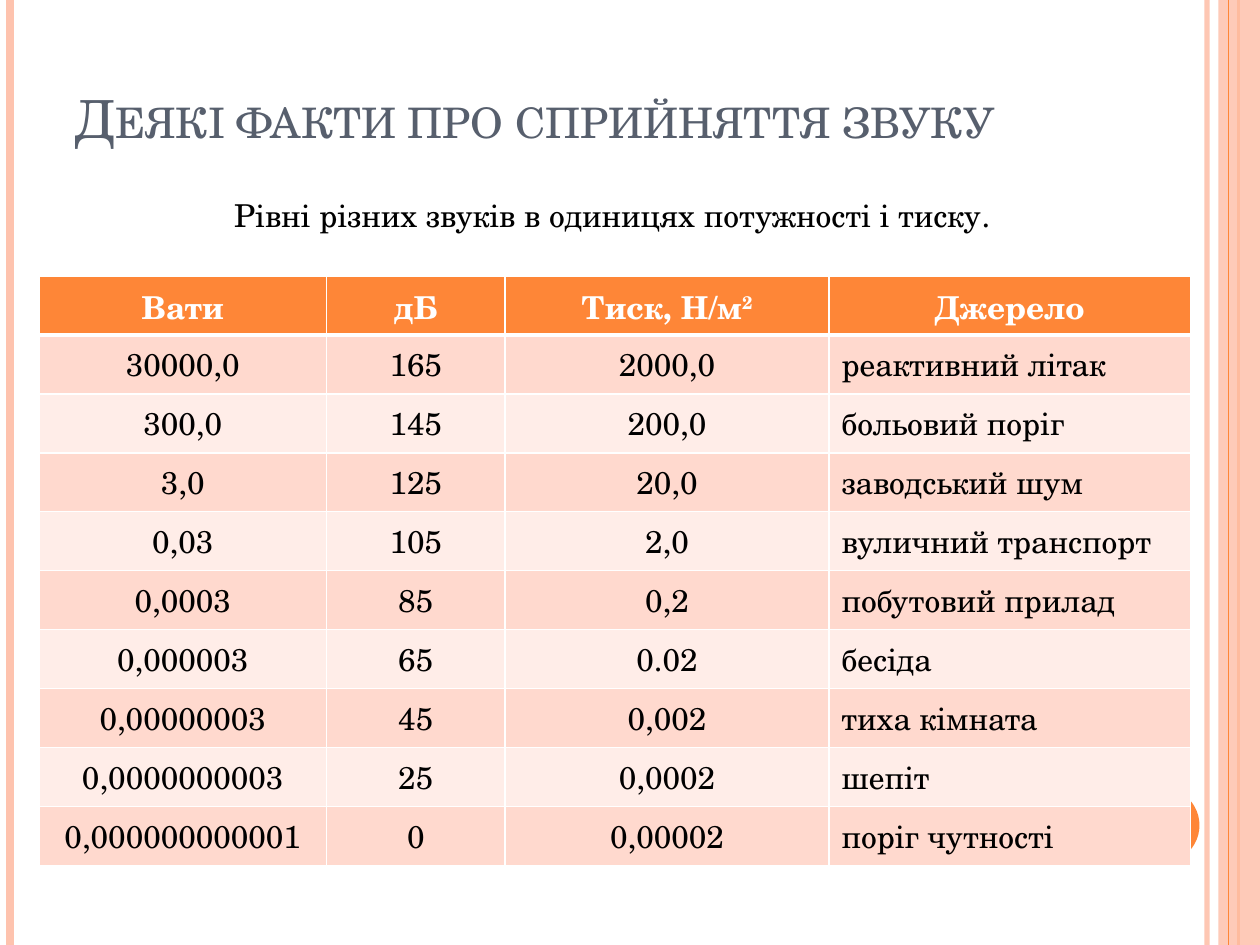
"""Build a slide with a table of sound levels in power and pressure units."""
from lxml import etree
from pptx import Presentation
from pptx.dml.color import RGBColor
from pptx.enum.shapes import MSO_CONNECTOR, MSO_SHAPE
from pptx.enum.text import MSO_ANCHOR, PP_ALIGN
from pptx.oxml.ns import qn
from pptx.util import Inches, Pt

STRAIGHT = MSO_CONNECTOR.STRAIGHT
RECTANGLE, OVAL = MSO_SHAPE.RECTANGLE, MSO_SHAPE.OVAL
LEFT, CENTER = PP_ALIGN.LEFT, PP_ALIGN.CENTER
BOTTOM = MSO_ANCHOR.BOTTOM
FONT = "TeX Gyre Schola"
COLORS = {
    "orange": "FE8637", "peach": "FEC3AE", "slate": "575F6D", "white": "FFFFFF",
    "black": "000000", "odd": "FFD9CE", "even": "FFEDE8",
}


def add_run(paragraph, text, size, color, bold=False, **marks):
    run = paragraph.add_run()
    run.text = text
    run.font.name, run.font.size, run.font.bold = FONT, Pt(size), bold
    run.font.color.rgb = RGBColor.from_string(COLORS[color])
    for mark, value in marks.items():
        run.font._element.set(mark, value)


def set_alpha(parent, percent):
    for color in parent.iter(qn("a:srgbClr")):
        etree.SubElement(color, qn("a:alpha")).set("val", str(percent * 1000))


prs = Presentation()
prs.slide_width, prs.slide_height = Inches(10), Inches(7.5)
W, H = prs.slide_width, prs.slide_height
slide = prs.slides.add_slide(prs.slide_layouts[6])
shapes = slide.shapes

band = (RECTANGLE, 9.67, 0, 0.33, 7.5, "peach", 87)
disc = (OVAL, 8.92, 6.25, 0.6, 0.6, "orange", 100)
ornaments = [
    (9.58, "peach", 3, 93),
    (0.08, "peach", 4.5, 100),
    (9.83, "orange", 1.5, 100),
    band,
    (9.75, "orange", 0.75, 100),
    disc,
]
for part in ornaments:
    if part in (band, disc):
        preset, left, top, width, height, color, alpha = part
        ornament = shapes.add_shape(preset, *map(Inches, (left, top, width, height)))
        ornament.shadow.inherit = False
        ornament.fill.solid()
        ornament.fill.fore_color.rgb = RGBColor.from_string(COLORS[color])
        ornament.line.fill.background()
    else:
        x, color, weight, alpha = part
        ornament = shapes.add_connector(STRAIGHT, Inches(x), 0, Inches(x), H)
        ornament.line.color.rgb = RGBColor.from_string(COLORS[color])
        ornament.line.width = Pt(weight)
        etree.SubElement(ornament._element.spPr, qn("a:effectLst"))
    if alpha < 100:
        set_alpha(ornament._element.spPr, alpha)

title = shapes.add_textbox(int(W * 0.05), int(H * 0.04), int(W * 0.895), Inches(0.93)).text_frame
title.word_wrap = True
title.vertical_anchor = BOTTOM
add_run(title.paragraphs[0], "Деякі факти про сприйняття звуку", 30, "slate", cap="small")

levels = [
    ("Вати", "дБ", "Тиск, Н/м", "Джерело"),
    ("30000,0", "165", "2000,0", "реактивний літак"),
    ("300,0", "145", "200,0", "больовий поріг"),
    ("3,0", "125", "20,0", "заводський шум"),
    ("0,03", "105", "2,0", "вуличний транспорт"),
    ("0,0003", "85", "0,2", "побутовий прилад"),
    ("0,000003", "65", "0.02", "бесіда"),
    ("0,00000003", "45", "0,002", "тиха кімната"),
    ("0,0000000003", "25", "0,0002", "шепіт"),
    ("0,000000000001", "0", "0,00002", "поріг чутності"),
]
column_widths = [2.28, 1.42, 2.57, 2.87]
table_height = Inches(4.68)
row_height = table_height // len(levels)
table = shapes.add_table(
    len(levels), len(column_widths), Inches(0.31), Inches(2.19),
    Inches(sum(column_widths)), table_height,
).table
for column, width in zip(table.columns, column_widths):
    column.width = Inches(width)

for r, level in enumerate(levels):
    header = r == 0
    table.rows[r].height = row_height
    fill = "orange" if header else "odd" if r % 2 else "even"
    borders = {"lnL": 1, "lnR": 1, "lnT": 3 if r == 1 else 1, "lnB": 3 if header else 1}
    for c, text in enumerate(level):
        cell = table.cell(r, c)
        properties = cell._tc.get_or_add_tcPr()
        for side, weight in borders.items():
            border = etree.SubElement(properties, qn(f"a:{side}"), w=str(Pt(weight)))
            paint = etree.SubElement(border, qn("a:solidFill"))
            etree.SubElement(paint, qn("a:srgbClr"), val=COLORS["white"])
        cell.fill.solid()
        cell.fill.fore_color.rgb = RGBColor.from_string(COLORS[fill])
        paragraph = cell.text_frame.paragraphs[0]
        paragraph.alignment = CENTER if header or c < 3 else LEFT
        add_run(paragraph, text, 18, "white" if header else "black", header)

add_run(table.cell(0, 2).text_frame.paragraphs[0], "2", 18, "white", True, baseline="30000")

caption = shapes.add_textbox(Inches(0.64), Inches(1.51), Inches(8.44), Inches(0.4)).text_frame
caption.word_wrap = True
caption.paragraphs[0].alignment = CENTER
add_run(caption.paragraphs[0], "Рівні різних звуків в одиницях потужності і тиску.", 18, "black")

prs.save("out.pptx")
